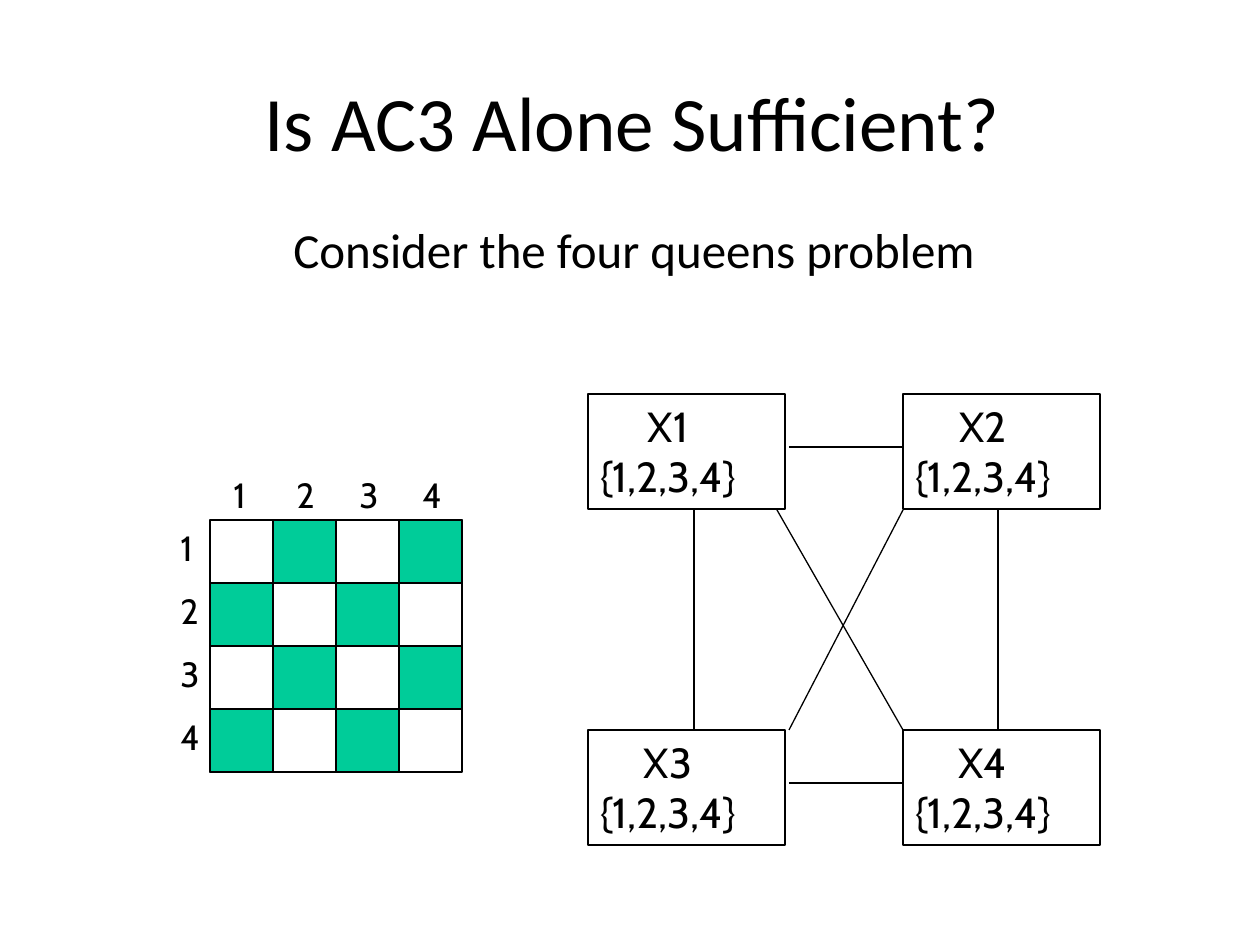
from dataclasses import dataclass

import pptx
import pptx.dml.color
import pptx.enum.shapes
import pptx.enum.text
import pptx.oxml
import pptx.oxml.ns
import pptx.shapes.base
import pptx.slide
import pptx.util

EMU_PER_PX = 914400 / 126
COLORS = {"ink": "000000", "square": "00CC99"}
ALIGN = pptx.enum.text.PP_ALIGN
ANCHOR = pptx.enum.text.MSO_ANCHOR
CELL = 63
BOARD_SIZE = 4
BOARD_LEFT, BOARD_TOP = 210, 520
NODE_WIDTH, NODE_HEIGHT = 197, 115


@dataclass
class Label:
    text: str
    left: int
    top: int
    width: int
    height: int
    size: int
    font: str = "Calibri"
    align: ALIGN = ALIGN.CENTER
    anchor: ANCHOR = ANCHOR.TOP


@dataclass
class Variable:
    name: str
    left: int
    top: int


@dataclass
class Constraint:
    x1: int
    y1: int
    x2: int
    y2: int


def px(value: int) -> pptx.util.Emu:
    return pptx.util.Emu(round(value * EMU_PER_PX))


def rgb(name: str) -> pptx.dml.color.RGBColor:
    return pptx.dml.color.RGBColor.from_string(COLORS[name])


def write(shape: pptx.shapes.base.BaseShape, lines: list[str], size: int, font: str, align: ALIGN) -> None:
    frame = shape.text_frame
    frame.word_wrap = True
    for index, line in enumerate(lines):
        paragraph = frame.add_paragraph() if index else frame.paragraphs[0]
        paragraph.alignment = align
        run = paragraph.add_run()
        run.text = line
        run.font.size = pptx.util.Pt(size)
        run.font.name = font
        run.font.color.rgb = rgb("ink")


def draw_label(slide: pptx.slide.Slide, label: Label) -> None:
    shape = slide.shapes.add_textbox(px(label.left), px(label.top), px(label.width), px(label.height))
    shape.text_frame.vertical_anchor = label.anchor
    write(shape, [label.text], label.size, label.font, label.align)


def draw_rectangle(
    slide: pptx.slide.Slide, left: int, top: int, width: int, height: int, fill: str | None = None
) -> pptx.shapes.base.BaseShape:
    shape = slide.shapes.add_shape(
        pptx.enum.shapes.MSO_SHAPE.RECTANGLE, px(left), px(top), px(width), px(height)
    )
    shape.shadow.inherit = False
    if fill:
        shape.fill.solid()
        shape.fill.fore_color.rgb = rgb(fill)
    else:
        shape.fill.background()
    shape.line.color.rgb = rgb("ink")
    shape.line.width = pptx.util.Pt(0.75)
    return shape


def draw_board(slide: pptx.slide.Slide) -> None:
    side = CELL * BOARD_SIZE
    draw_rectangle(slide, BOARD_LEFT, BOARD_TOP, side, side)
    for row in range(BOARD_SIZE):
        for column in range(BOARD_SIZE):
            if (row + column) % 2:
                draw_rectangle(
                    slide, BOARD_LEFT + column * CELL, BOARD_TOP + row * CELL, CELL, CELL, "square"
                )
    for index in range(BOARD_SIZE):
        offset = index * CELL
        for left, top in ((168, BOARD_TOP + offset), (221 + offset, 467)):
            draw_label(slide, Label(str(index + 1), left, top, 44, 54, 20, "Cabin", ALIGN.LEFT))


def draw_variable(slide: pptx.slide.Slide, variable: Variable) -> None:
    shape = draw_rectangle(slide, variable.left, variable.top, NODE_WIDTH, NODE_HEIGHT)
    frame = shape.text_frame
    frame.vertical_anchor = ANCHOR.TOP
    frame.margin_left, frame.margin_right = px(8), px(45)
    write(shape, [variable.name, "{1,2,3,4}"], 24, "Cabin", ALIGN.CENTER)


def draw_constraint(slide: pptx.slide.Slide, constraint: Constraint) -> None:
    connector = slide.shapes.add_connector(
        pptx.enum.shapes.MSO_CONNECTOR.STRAIGHT,
        px(constraint.x1), px(constraint.y1), px(constraint.x2), px(constraint.y2),
    )
    connector.line.color.rgb = rgb("ink")
    connector.line.width = pptx.util.Pt(0.75)
    properties = connector.element.find(pptx.oxml.ns.qn("p:spPr"))
    properties.append(pptx.oxml.parse_xml(f'<a:effectLst {pptx.oxml.ns.nsdecls("a")}/>'))


HEADINGS = [
    Label("Is AC3 Alone Sufficient?", 97, 42, 1071, 158, 44, anchor=ANCHOR.MIDDLE),
    Label("Consider the four queens problem", 277, 213, 714, 72, 28),
]
VARIABLES = [
    Variable("X1", 588, 394),
    Variable("X2", 903, 394),
    Variable("X3", 588, 730),
    Variable("X4", 903, 730),
]
CONSTRAINTS = [
    Constraint(789, 447, 903, 447),
    Constraint(694, 510, 694, 730),
    Constraint(789, 783, 903, 783),
    Constraint(998, 510, 998, 730),
    Constraint(777, 510, 903, 730),
    Constraint(903, 510, 789, 730),
]


def main() -> None:
    presentation = pptx.Presentation()
    presentation.slide_width, presentation.slide_height = px(1260), px(945)
    slide = presentation.slides.add_slide(presentation.slide_layouts[6])
    for heading in HEADINGS:
        draw_label(slide, heading)
    draw_board(slide)
    for variable in VARIABLES:
        draw_variable(slide, variable)
    for constraint in CONSTRAINTS:
        draw_constraint(slide, constraint)
    presentation.save("out.pptx")


if __name__ == "__main__":
    main()
